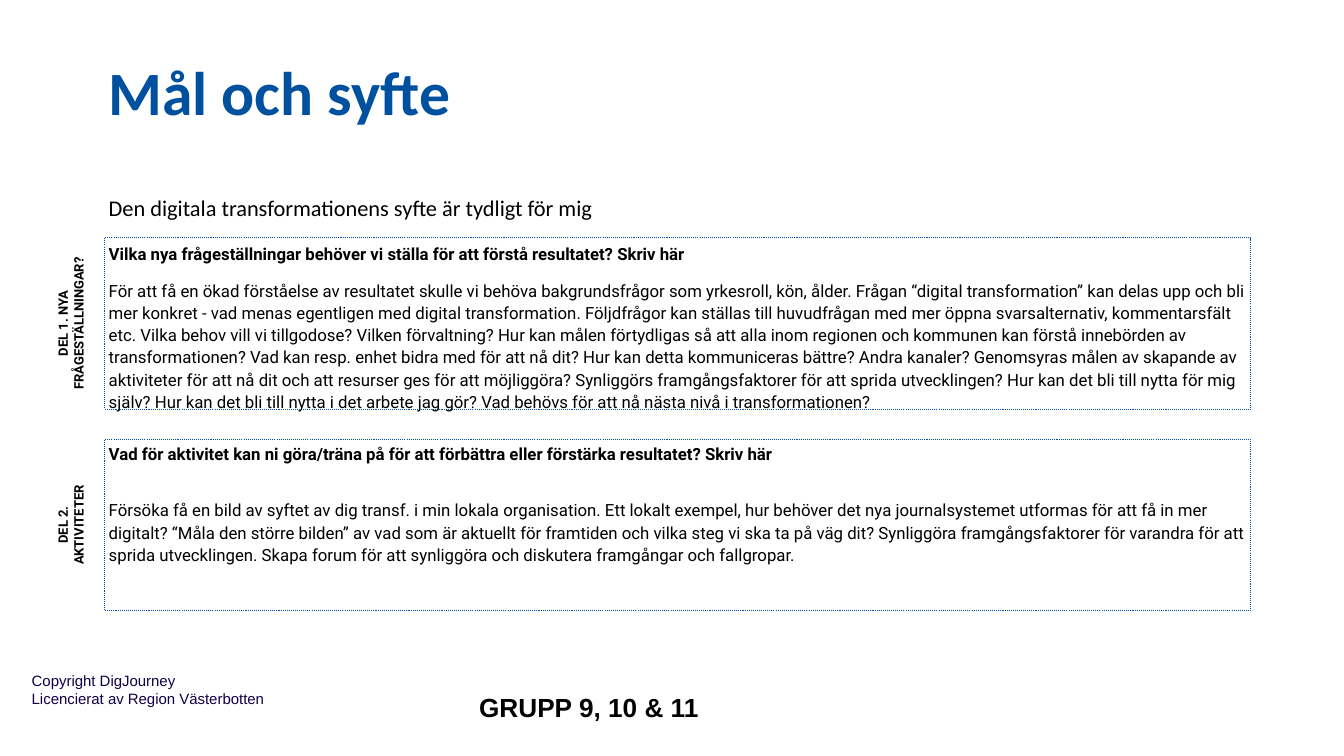
from dataclasses import dataclass

from lxml.etree import SubElement
from pptx import Presentation
from pptx.dml.color import RGBColor
from pptx.enum.dml import MSO_LINE
from pptx.enum.text import MSO_ANCHOR, MSO_AUTO_SIZE, PP_ALIGN
from pptx.oxml.ns import qn
from pptx.util import Cm, Pt


@dataclass(frozen=True)
class Theme:
    """Colours, fonts and type sizes of the slide."""
    blue: str = "0050A0"
    navy: str = "110046"
    black: str = "000000"
    head: str = "Calibri"
    body: str = "Roboto"
    foot: str = "Arial"
    title: float = 44
    lead: float = 16
    text: float = 12
    label: float = 9.3
    group: float = 18.7
    rights: float = 10.7


THEME = Theme()
LEFT = 2.64
WIDTH, HEIGHT = 28.88, 4.32
TOP, STEP = 5.99, 5.08
LABEL_H = 1.47

PARTS = [
    (2, "DEL 1. NYA FRÅGESTÄLLNINGAR?", 1.1, 10.7,
     "Vilka nya frågeställningar behöver vi ställa för att förstå resultatet? Skriv här",
     ["För att få en ökad förståelse av resultatet skulle vi behöva bakgrundsfrågor som yrkesroll, "
      "kön, ålder. Frågan “digital transformation” kan delas upp och bli mer konkret - vad menas "
      "egentligen med digital transformation.",
      "Följdfrågor kan ställas till huvudfrågan med mer öppna svarsalternativ, kommentarsfält etc.",
      "Vilka behov vill vi tillgodose? Vilken förvaltning?",
      "Hur kan målen förtydligas så att alla inom regionen och kommunen kan förstå innebörden av "
      "transformationen? Vad kan resp. enhet bidra med för att nå dit?",
      "Hur kan detta kommuniceras bättre? Andra kanaler?",
      "Genomsyras målen av skapande av aktiviteter för att nå dit och att resurser ges för att "
      "möjliggöra? Synliggörs framgångsfaktorer för att sprida utvecklingen?",
      "Hur kan det bli till nytta för mig själv? Hur kan det bli till nytta i det arbete jag gör?",
      "Vad behövs för att nå nästa nivå i transformationen?"]),
    (4, "DEL 2.\nAKTIVITETER", 1.0, 24.8,
     "Vad för aktivitet kan ni göra/träna på för att förbättra eller förstärka resultatet? Skriv här",
     ["Försöka få en bild av syftet av dig transf. i min lokala organisation.",
      "Ett lokalt exempel, hur behöver det nya journalsystemet utformas för att få in mer digitalt?",
      "“Måla den större bilden” av vad som är aktuellt för framtiden och vilka steg vi ska ta på "
      "väg dit?",
      "Synliggöra framgångsfaktorer för varandra för att sprida utvecklingen.",
      "Skapa forum för att synliggöra och diskutera framgångar och fallgropar."]),
]


def place(shape, left, top, width, height):
    """Move and size a shape, in centimetres."""
    shape.left, shape.top = Cm(left), Cm(top)
    shape.width, shape.height = Cm(width), Cm(height)


def frame(shape, inset, anchor=MSO_ANCHOR.TOP):
    """Set wrapping, insets and anchor, and return the text frame."""
    text = shape.text_frame
    text.word_wrap = True
    text.auto_size = MSO_AUTO_SIZE.NONE
    text.vertical_anchor = anchor
    text.margin_left = text.margin_right = Cm(inset)
    text.margin_top = text.margin_bottom = Cm(inset)
    return text


def style(para, font, size, color, bold=False, align=PP_ALIGN.LEFT, before=0, lines=1.0):
    """Format a plain paragraph and its runs."""
    props = para._p.get_or_add_pPr()
    props.set("marL", "0")
    props.set("indent", "0")
    SubElement(props, qn("a:buNone"))
    para.alignment = align
    para.space_before = Pt(before)
    para.line_spacing = lines
    for run in para.runs:
        run.font.name, run.font.size, run.font.bold = font, Pt(size), bold
        run.font.color.rgb = RGBColor.from_string(color)


def holder(slide, index, text, spot, font, size, color, bold=False):
    """Fill a one-line placeholder that sits on its lower edge."""
    shape = slide.placeholders[index]
    place(shape, *spot)
    body = frame(shape, 0.1, MSO_ANCHOR.BOTTOM)
    body.text = text
    style(body.paragraphs[0], font, size, color, bold)
    return body.paragraphs[0]


def note(slide, text, spot, font, size, color, bold=False, align=PP_ALIGN.CENTER):
    """Add a free text box."""
    box = slide.shapes.add_textbox(*map(Cm, spot))
    body = frame(box, 0.34)
    body.text = text
    for para in body.paragraphs:
        style(para, font, size, color, bold, align)
    return box


def panel(slide, index, top, lines, gap, head, answer):
    """Fill a dotted box with a bold question and its answer."""
    shape = slide.placeholders[index]
    place(shape, LEFT, top, WIDTH, HEIGHT)
    shape.line.color.rgb = RGBColor.from_string(THEME.blue)
    shape.line.width = Pt(0.75)
    shape.line.dash_style = MSO_LINE.ROUND_DOT
    body = frame(shape, 0.1)
    body.text = "\n".join([head, " ".join(answer)])
    first, second = body.paragraphs
    style(first, THEME.body, THEME.text, THEME.black, True, lines=lines)
    style(second, THEME.body, THEME.text, THEME.black, before=gap, lines=1.1)


def label(slide, text, top):
    """Add an upright label beside a box, centred on its height."""
    spot = (-0.38, top + (HEIGHT - LABEL_H) / 2, HEIGHT, LABEL_H)
    box = note(slide, text, spot, THEME.body, THEME.label, THEME.black, True)
    box.rotation = 270


def main():
    """Build and save the slide."""
    deck = Presentation()
    deck.slide_width, deck.slide_height = Cm(33.87), Cm(19.05)
    slide = deck.slides.add_slide(deck.slide_layouts[4])
    spare = slide.placeholders[3].element
    spare.getparent().remove(spare)

    note(slide, "Copyright DigJourney\nLicencierat av Region Västerbotten",
         (0.46, 16.59, 11.1, 1.6), THEME.foot, THEME.rights, THEME.navy,
         align=PP_ALIGN.LEFT)
    holder(slide, 0, "Mål och syfte", (LEFT, -0.13, 25.2, 3.45),
           THEME.head, THEME.title, THEME.blue, True)
    lead = holder(slide, 1, "Den digitala transformationens syfte är tydligt för mig",
                  (LEFT, 3.66, 20.19, 2.01), THEME.head, THEME.lead, THEME.black)
    lead.space_after = Pt(5.3)
    note(slide, "GRUPP 9, 10 & 11", (11.4, 17.07, 6.88, 1.47),
         THEME.foot, THEME.group, THEME.black, True)

    for row, (index, name, lines, gap, head, answer) in enumerate(PARTS):
        top = TOP + row * STEP
        panel(slide, index, top, lines, gap, head, answer)
        label(slide, name, top)
    deck.save("out.pptx")


if __name__ == "__main__":
    main()
